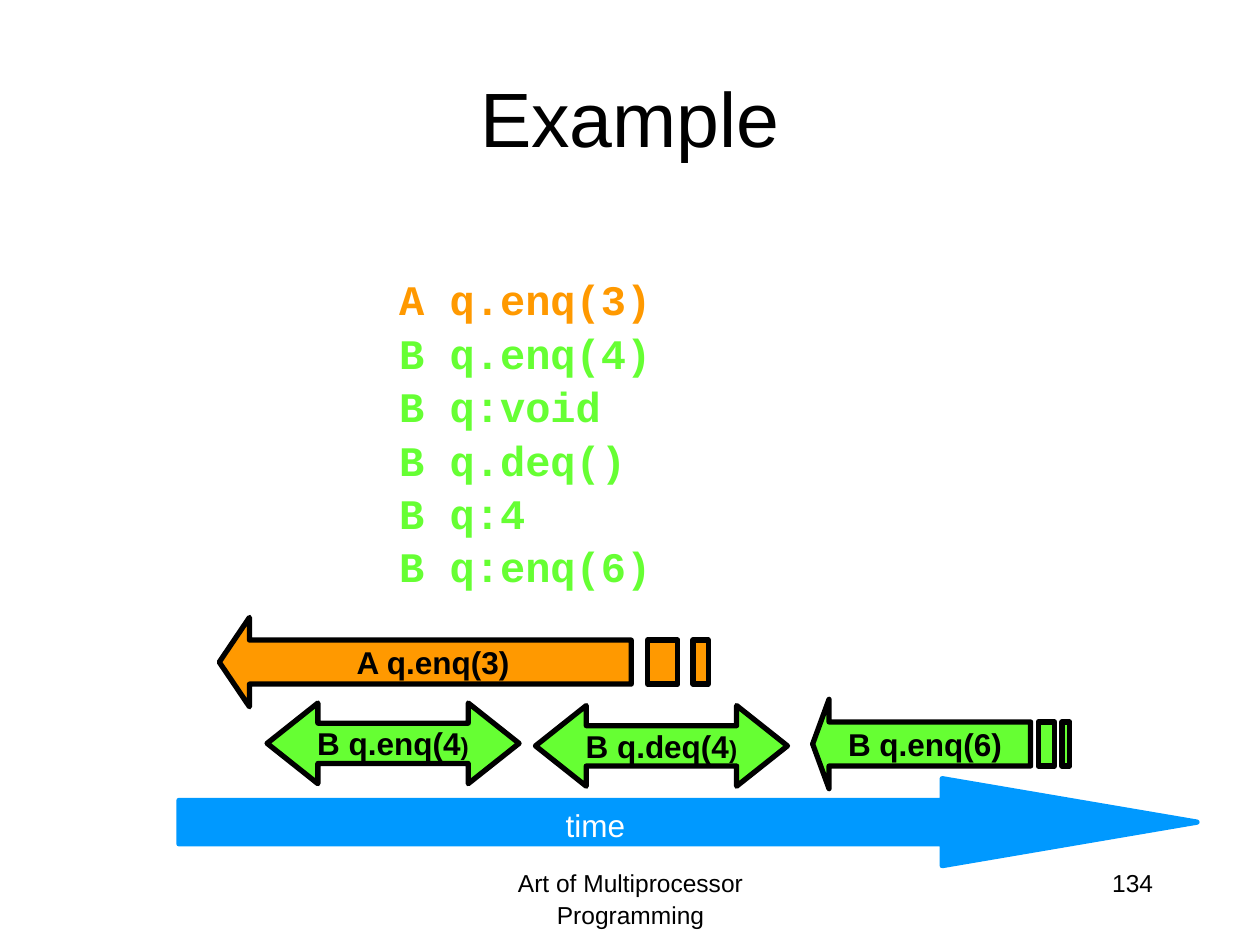
from lxml import etree
from pptx import Presentation
from pptx.dml.color import RGBColor
from pptx.enum.shapes import MSO_SHAPE
from pptx.enum.text import MSO_ANCHOR, PP_ALIGN
from pptx.util import Inches, Pt

LEFT, CENTER, RIGHT = PP_ALIGN.LEFT, PP_ALIGN.CENTER, PP_ALIGN.RIGHT
MIDDLE = MSO_ANCHOR.MIDDLE
RIGHT_ARROW = MSO_SHAPE.RIGHT_ARROW
DOUBLE_ARROW = MSO_SHAPE.LEFT_RIGHT_ARROW

COLORS = {
    "black": "000000",
    "white": "FFFFFF",
    "thread_a": "FF9900",
    "thread_b": "66FF33",
    "time": "0099FF",
}
HISTORY = [
    ("A q.enq(3)", "thread_a"),
    ("B q.enq(4)", "thread_b"),
    ("B q:void", "thread_b"),
    ("B q.deq()", "thread_b"),
    ("B q:4", "thread_b"),
    ("B q:enq(6)", "thread_b"),
]
SHAFT_INSET, SHAFT_HEIGHT, ARROW_HEIGHT = 0.18, 0.35, 0.71


def color(name):
    return RGBColor.from_string(COLORS[name])


def set_font(font, size, color_name="black", bold=False, name="Arial"):
    font.name = name
    font.size = Pt(size)
    font.bold = bold
    font.color.rgb = color(color_name)


def add_text(slide, box, lines, size, align=LEFT, bold=False, name="Arial", wrap=True):
    """Add a text box with one paragraph for each (text, color name) line."""
    text_box = slide.shapes.add_textbox(*map(Inches, box))
    frame = text_box.text_frame
    frame.word_wrap = wrap
    for index, (text, color_name) in enumerate(lines):
        paragraph = frame.add_paragraph() if index else frame.paragraphs[0]
        paragraph.text = text
        paragraph.alignment = align
        paragraph.line_spacing = 1.06
        set_font(paragraph.font, size, color_name, bold, name)
    return text_box


def style_shape(shape, fill, line):
    shape.shadow.inherit = False
    shape.fill.solid()
    shape.fill.fore_color.rgb = color(fill)
    shape.line.color.rgb = color(line)
    shape.line.width = Pt(3)


def add_label(shape, text, small_end=""):
    """Center a bold label in the shape, with an optional smaller ending."""
    frame = shape.text_frame
    frame.word_wrap = False
    frame.vertical_anchor = MIDDLE
    paragraph = frame.paragraphs[0]
    paragraph.alignment = CENTER
    for part, size in ((text, 18), (small_end, 14)):
        if part:
            run = paragraph.add_run()
            run.text = part
            set_font(run.font, size, bold=True)


def add_arrow(slide, kind, box, adjustment, fill, line):
    arrow = slide.shapes.add_shape(kind, *map(Inches, box))
    arrow.adjustments[0] = 0.5
    arrow.adjustments[1] = adjustment
    style_shape(arrow, fill, line)
    return arrow


def add_pending_call(slide, text, fill, left, top, neck, shaft_end, stripes):
    """Draw a left arrow whose tail breaks up into stripes: a call with no return yet."""
    upper = top + SHAFT_INSET
    lower = upper + SHAFT_HEIGHT
    bottom = top + ARROW_HEIGHT
    contours = [[
        (neck, top), (neck, upper), (shaft_end, upper), (shaft_end, lower),
        (neck, lower), (neck, bottom), (left, (top + bottom) / 2),
    ]]
    for start, end in stripes:
        contours.append([(end, upper), (end, lower), (start, lower), (start, upper)])

    contours = [[(Inches(x), Inches(y)) for x, y in points] for points in contours]
    builder = slide.shapes.build_freeform(*contours[0][0])
    for index, points in enumerate(contours):
        if index:
            builder.move_to(*points[0])
        builder.add_line_segments(points[1:], close=True)
    shape = builder.convert_to_shape()
    style_shape(shape, fill, "black")
    add_label(shape, text)
    # The label is centered on the arrow, leaving out the stripes.
    shape.text_frame.margin_right = Inches(0.1) + shape.width // 8


def main():
    presentation = Presentation()
    presentation.slide_width = Inches(10)
    presentation.slide_height = Inches(7.5)
    slide = presentation.slides.add_slide(presentation.slide_layouts[5])

    title = slide.shapes.title
    title.left, title.top, title.width, title.height = map(Inches, (0.5, 0.3, 9, 1.25))
    title.text_frame.vertical_anchor = MIDDLE
    paragraph = title.text_frame.paragraphs[0]
    paragraph.text = "Example"
    paragraph.alignment = CENTER
    set_font(paragraph.font, 44)

    add_text(slide, (3.42, 6.83, 3.17, 0.5),
             [("Art of Multiprocessor Programming", "black")], 14, CENTER)
    add_text(slide, (7.17, 6.83, 2.08, 0.5), [("134", "black")], 14, RIGHT)
    history = add_text(slide, (3.07, 2.07, 3.05, 2.52), HISTORY, 24,
                       bold=True, name="Courier New")
    history.text_frame.margin_top = Inches(0.08)

    add_arrow(slide, RIGHT_ARROW, (1.42, 6.18, 8.08, 0.69), 2.93, "time", "time")
    add_text(slide, (4.38, 6.33, 0.68, 0.4), [("time", "white")], 18, RIGHT, wrap=False)

    for text, left, top in (("B q.enq(4", 2.12, 5.58), ("B q.deq(4", 4.25, 5.6)):
        call = add_arrow(slide, DOUBLE_ARROW, (left, top, 2, 0.64), 0.63,
                         "thread_b", "black")
        add_label(call, text, ")")

    add_pending_call(slide, "A q.enq(3)", "thread_a", 1.74, 4.9, 1.98, 5.01,
                     [(5.14, 5.38), (5.5, 5.62)])
    add_pending_call(slide, "B q.enq(6)", "thread_b", 6.45, 5.55, 6.58, 8.18,
                     [(8.24, 8.37), (8.43, 8.49)])

    presentation.save("out.pptx")


if __name__ == "__main__":
    main()
